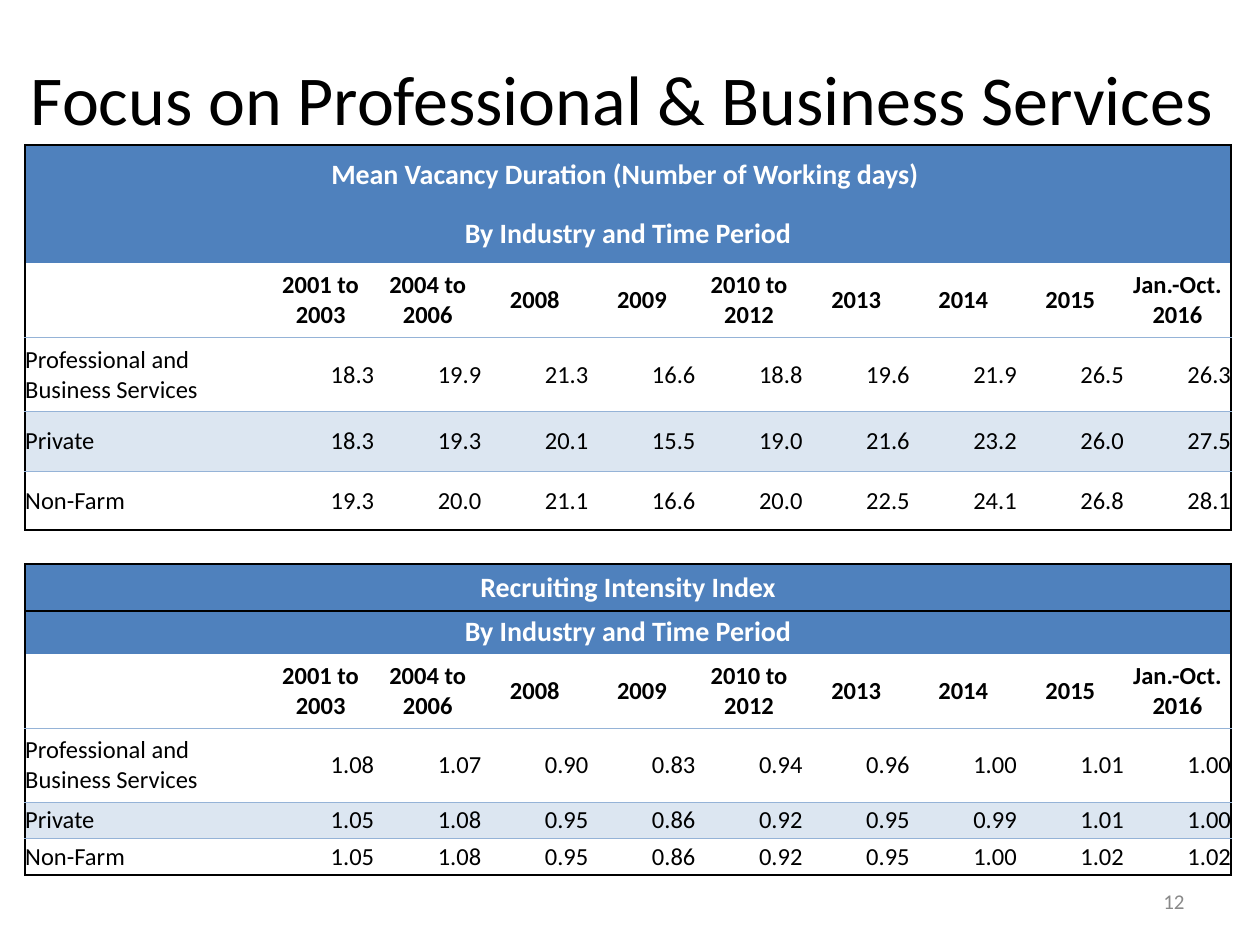
"""Build a slide comparing vacancy duration and recruiting intensity by industry."""
from dataclasses import dataclass

from lxml.etree import SubElement
from pptx import Presentation
from pptx.dml.color import RGBColor
from pptx.enum.text import MSO_ANCHOR as Anchor, PP_ALIGN as Align
from pptx.oxml.ns import qn
from pptx.table import Table, _Cell as Cell
from pptx.text.text import TextFrame
from pptx.util import Inches, Pt

FONT = "Calibri"
BLACK = RGBColor(0x00, 0x00, 0x00)
WHITE = RGBColor(0xFF, 0xFF, 0xFF)
GRAY = RGBColor(0x89, 0x89, 0x89)
BLUE = RGBColor(0x4F, 0x81, 0xBD)
PALE_BLUE = RGBColor(0xDC, 0xE6, 0xF1)
LINE_BLUE = RGBColor(0x95, 0xB3, 0xD7)
NO_STYLE = "{2D5ABB26-0587-4C30-8999-92F81FD0307C}"

PERIODS = ["2001 to 2003", "2004 to 2006", "2008", "2009", "2010 to 2012",
           "2013", "2014", "2015", "Jan.-Oct. 2016"]
INDUSTRIES = ["Professional and Business Services", "Private", "Non-Farm"]
COLUMN_WIDTHS = [1.92] + [0.85] * len(PERIODS)
GAP_HEIGHT = 0.27


@dataclass
class Border:
    """A cell edge."""
    color: RGBColor
    width: float


@dataclass
class TextStyle:
    """The look of one run of text."""
    size: int
    color: RGBColor = BLACK
    bold: bool = False
    align: Align = Align.LEFT


@dataclass
class Section:
    """One titled block of the table."""
    title: str
    heights: list[float]
    values: list[list[float]]
    decimals: int


FRAME = Border(BLACK, 1.5)
HAIRLINE = Border(LINE_BLUE, 0.5)
BANNER = TextStyle(16, WHITE, True, Align.CENTER)
PERIOD = TextStyle(14, bold=True, align=Align.CENTER)
LABEL = TextStyle(14)
VALUE = TextStyle(14, align=Align.RIGHT)

SECTIONS = [
    Section("Mean Vacancy Duration (Number of Working days) ",
            [0.47, 0.47, 0.59, 0.59, 0.47, 0.47],
            [[18.3, 19.9, 21.3, 16.6, 18.8, 19.6, 21.9, 26.5, 26.3],
             [18.3, 19.3, 20.1, 15.5, 19.0, 21.6, 23.2, 26.0, 27.5],
             [19.3, 20.0, 21.1, 16.6, 20.0, 22.5, 24.1, 26.8, 28.1]], 1),
    Section("Recruiting Intensity Index",
            [0.37, 0.34, 0.59, 0.59, 0.29, 0.29],
            [[1.08, 1.07, 0.90, 0.83, 0.94, 0.96, 1.00, 1.01, 1.00],
             [1.05, 1.08, 0.95, 0.86, 0.92, 0.95, 0.99, 1.01, 1.00],
             [1.05, 1.08, 0.95, 0.86, 0.92, 0.95, 1.00, 1.02, 1.02]], 2),
]


def write_text(frame: TextFrame, text: str, style: TextStyle) -> None:
    """Put one formatted run into a text frame."""
    frame.word_wrap = True
    paragraph = frame.paragraphs[0]
    paragraph.alignment = style.align
    run = paragraph.add_run()
    run.text = text
    run.font.name = FONT
    run.font.size = Pt(style.size)
    run.font.bold = style.bold
    run.font.color.rgb = style.color


def set_borders(cell: Cell, borders: dict[str, Border]) -> None:
    """Draw the given edges of a cell, keyed by L, R, T and B."""
    properties = cell._tc.get_or_add_tcPr()
    for side in "LRTB":
        if side in borders:
            border = borders[side]
            line = SubElement(properties, qn(f"a:ln{side}"), w=str(Pt(border.width)))
            fill = SubElement(line, qn("a:solidFill"))
            SubElement(fill, qn("a:srgbClr"), val=str(border.color))


def format_row(table: Table, row: int, edges: dict[str, Border],
               fill: RGBColor | None = None, framed: bool = True) -> None:
    """Set margins, borders and fill of every cell in a row."""
    cells = list(table.rows[row].cells)
    for column, cell in enumerate(cells):
        cell.margin_left = cell.margin_right = cell.margin_top = cell.margin_bottom = 0
        cell.vertical_anchor = Anchor.MIDDLE
        borders = dict(edges)
        if framed and column == 0:
            borders["L"] = FRAME
        if framed and column == len(cells) - 1:
            borders["R"] = FRAME
        set_borders(cell, borders)
        if fill is None:
            cell.fill.background()
        else:
            cell.fill.solid()
            cell.fill.fore_color.rgb = fill


def add_banner(table: Table, row: int, text: str, edges: dict[str, Border]) -> None:
    """Fill a full-width heading row."""
    format_row(table, row, edges, BLUE)
    cell = table.cell(row, 0)
    set_borders(cell, {"R": FRAME})
    cell.merge(table.cell(row, len(PERIODS)))
    write_text(cell.text_frame, text, BANNER)


def add_section(table: Table, top: int, section: Section) -> None:
    """Fill the rows of one section, starting at row top."""
    add_banner(table, top, section.title, {"T": FRAME})
    add_banner(table, top + 1, "By Industry and Time Period", {})
    format_row(table, top + 2, {"B": HAIRLINE})
    for column, period in enumerate(PERIODS, 1):
        write_text(table.cell(top + 2, column).text_frame, period, PERIOD)
    for index, (industry, values) in enumerate(zip(INDUSTRIES, section.values)):
        row = top + 3 + index
        bottom = FRAME if industry == INDUSTRIES[-1] else HAIRLINE
        format_row(table, row, {"T": HAIRLINE, "B": bottom},
                   PALE_BLUE if index % 2 else None)
        write_text(table.cell(row, 0).text_frame, industry, LABEL)
        for column, value in enumerate(values, 1):
            write_text(table.cell(row, column).text_frame,
                       f"{value:.{section.decimals}f}", VALUE)


def add_gap(table: Table, row: int) -> None:
    """Leave an empty row between two sections."""
    format_row(table, row, {"T": FRAME, "B": FRAME}, framed=False)
    for cell in table.rows[row].cells:
        SubElement(cell.text_frame.paragraphs[0]._p, qn("a:endParaRPr"), sz="1000")


def main() -> None:
    """Build and save the slide."""
    presentation = Presentation()
    presentation.slide_width, presentation.slide_height = Inches(10), Inches(7.5)
    slide = presentation.slides.add_slide(presentation.slide_layouts[5])

    title = slide.shapes.title
    title.left, title.top = Inches(0), Inches(0.4)
    title.width, title.height = Inches(10), Inches(0.75)
    title.text_frame.vertical_anchor = Anchor.MIDDLE
    write_text(title.text_frame, "Focus on Professional & Business Services ",
               TextStyle(40, align=Align.CENTER))

    first, second = SECTIONS
    heights = first.heights + [GAP_HEIGHT] + second.heights
    table = slide.shapes.add_table(
        len(heights), len(COLUMN_WIDTHS), Inches(0.2), Inches(1.15),
        Inches(sum(COLUMN_WIDTHS)), Inches(sum(heights))).table
    table.first_row = table.horz_banding = False
    table._tbl.tblPr.find(qn("a:tableStyleId")).text = NO_STYLE
    for column, width in zip(table.columns, COLUMN_WIDTHS):
        column.width = Inches(width)
    for row, height in zip(table.rows, heights):
        row.height = Inches(height)
    gap_row = len(first.heights)
    add_section(table, 0, first)
    add_gap(table, gap_row)
    add_section(table, gap_row + 1, second)

    number = slide.shapes.add_textbox(Inches(7.17), Inches(6.95), Inches(2.33), Inches(0.4))
    number.text_frame.vertical_anchor = Anchor.MIDDLE
    write_text(number.text_frame, "12", TextStyle(12, GRAY, align=Align.RIGHT))
    presentation.save("out.pptx")


if __name__ == "__main__":
    main()
